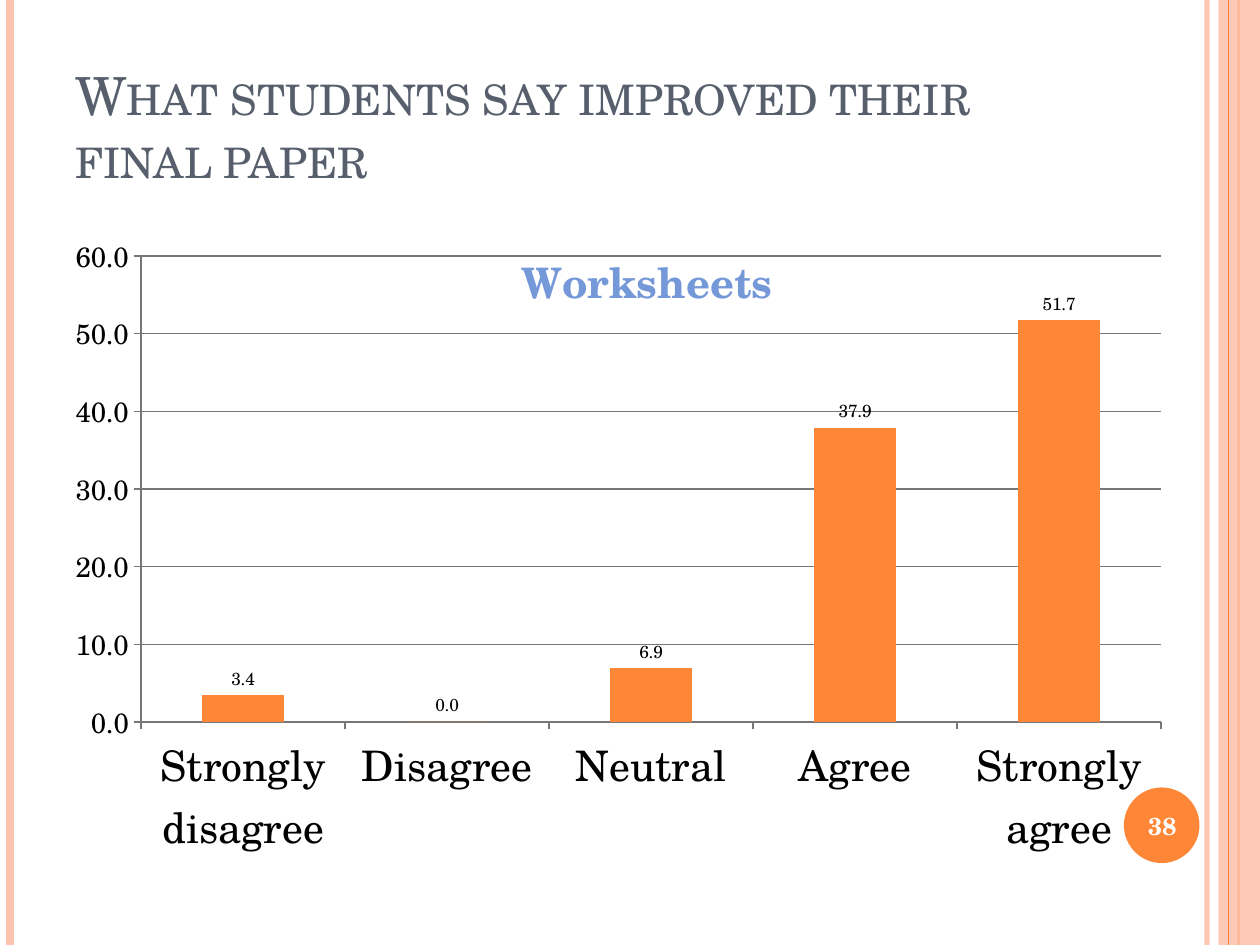
from lxml import etree
from pptx import Presentation
from pptx.chart.data import CategoryChartData
from pptx.dml.color import RGBColor
from pptx.enum.chart import XL_CHART_TYPE, XL_LABEL_POSITION, XL_TICK_MARK
from pptx.enum.shapes import MSO_CONNECTOR, MSO_SHAPE
from pptx.enum.text import MSO_ANCHOR, PP_ALIGN
from pptx.oxml import parse_xml
from pptx.oxml.ns import nsdecls, qn
from pptx.util import Inches, Pt

FONT = "TeX Gyre Schola"
ORANGE = RGBColor(0xFE, 0x86, 0x37)
PEACH = RGBColor(0xFE, 0xC3, 0xAE)
SLATE = RGBColor(0x57, 0x5F, 0x6D)
BLUE = RGBColor(0x75, 0x98, 0xD9)
GREY = RGBColor(0x77, 0x77, 0x77)
BLACK = RGBColor(0, 0, 0)
WHITE = RGBColor(0xFF, 0xFF, 0xFF)


def set_alpha(part, percent):
    """Make the solid colour inside a shape's properties see-through."""
    color = next(part.iter(qn("a:srgbClr")))
    etree.SubElement(color, qn("a:alpha")).set("val", str(percent * 1000))


def set_font(font, size, color, bold=False):
    """Give a font the slide's typeface and the wanted format."""
    font.name = FONT
    font.size = Pt(size)
    font.bold = bold
    font.color.rgb = color


def add_text(s, text, box, size, color, bold=False, small_caps=False,
             align=PP_ALIGN.LEFT, anchor=MSO_ANCHOR.MIDDLE):
    """Add a wrapped text box with one formatted run."""
    tf = s.shapes.add_textbox(*map(Inches, box)).text_frame
    tf.word_wrap = True
    tf.vertical_anchor = anchor
    p = tf.paragraphs[0]
    p.alignment = align
    r = p.add_run()
    r.text = text
    set_font(r.font, size, color, bold)
    if small_caps:
        r.font._element.set("cap", "small")


def add_shape(s, kind, box, color):
    """Add a plain filled shape without outline or shadow."""
    shape = s.shapes.add_shape(kind, *map(Inches, box))
    shape.shadow.inherit = False
    shape.fill.solid()
    shape.fill.fore_color.rgb = color
    shape.line.fill.background()
    return shape


def add_stripe(s, x, height, color, width):
    """Add a vertical line from the top of the slide."""
    line = s.shapes.add_connector(
        MSO_CONNECTOR.STRAIGHT, Inches(x), Inches(0), Inches(x), Inches(height))
    line.line.color.rgb = color
    line.line.width = Pt(width)
    etree.SubElement(line._element.spPr, qn("a:effectLst"))
    return line


def add_borders(s, width, height):
    """Draw the striped left and right edges."""
    set_alpha(add_stripe(s, width - 0.42, height, PEACH, 3)._element, 93)
    add_stripe(s, 0.08, height, PEACH, 4.5)
    add_stripe(s, width - 0.17, height, ORANGE, 1.5)
    band = add_shape(s, MSO_SHAPE.RECTANGLE, (width - 0.33, 0, 0.33, height), PEACH)
    set_alpha(band._element, 87)
    add_stripe(s, width - 0.25, height, ORANGE, 0.75)


def add_badge(s, x, y, size, number):
    """Draw the page number in its disc."""
    add_shape(s, MSO_SHAPE.OVAL, (x, y, size, size), ORANGE)
    add_text(s, number, (x - 0.03, y + 0.02, size + 0.07, size - 0.03), 14, WHITE,
             bold=True, align=PP_ALIGN.CENTER)


def set_layout(element, **places):
    """Place a chart part by fractions of the chart area."""
    for old in element.findall(qn("c:layout")):
        element.remove(old)
    target = '<c:layoutTarget val="inner"/>' if "w" in places else ""
    modes = "".join(f'<c:{k}Mode val="edge"/>' for k in "xy")
    values = "".join(f'<c:{k} val="{v}"/>' for k, v in places.items())
    layout = parse_xml(f'<c:layout {nsdecls("c")}><c:manualLayout>{target}{modes}'
                       f'{values}</c:manualLayout></c:layout>')
    tx = element.find(qn("c:tx"))
    if tx is None:
        element.insert(0, layout)
    else:
        tx.addnext(layout)


def style_axis(axis, size):
    """Format an axis line, its ticks and its labels."""
    axis.major_tick_mark = XL_TICK_MARK.OUTSIDE
    axis.minor_tick_mark = XL_TICK_MARK.NONE
    axis.format.line.color.rgb = GREY
    axis.format.line.width = Pt(0.75)
    set_font(axis.tick_labels.font, size, BLACK)


def add_title(chart, text):
    """Lay the chart title over the plot."""
    title = chart.chart_title
    p = title.text_frame.paragraphs[0]
    r = p.add_run()
    r.text = text
    set_font(r.font, 24, BLUE, bold=True)
    set_layout(title._element, x=0.39, y=0.06)
    for old in title._element.findall(qn("c:overlay")):
        title._element.remove(old)
    overlay = parse_xml(f'<c:overlay {nsdecls("c")} val="1"/>')
    title._element.find(qn("c:layout")).addnext(overlay)


def add_survey_chart(s, box, name, answers):
    """Add the column chart of survey answers."""
    data = CategoryChartData(number_format="0.0")
    data.categories = list(answers)
    data.add_series(name, list(answers.values()))
    chart = s.shapes.add_chart(
        XL_CHART_TYPE.COLUMN_CLUSTERED, *map(Inches, box), data).chart
    chart.has_legend = False
    set_font(chart.font, 10, BLACK)
    add_title(chart, name)
    plot_area = next(chart._chartSpace.iter(qn("c:plotArea")))
    set_layout(plot_area, x=0.05, y=0.09, w=0.93, h=0.69)

    style_axis(chart.category_axis, 24)
    axis = chart.value_axis
    style_axis(axis, 16)
    axis.minimum_scale, axis.maximum_scale, axis.major_unit = 0, 60, 10
    axis.tick_labels.number_format = "0.0"
    axis.tick_labels.number_format_is_linked = False
    axis.major_gridlines.format.line.color.rgb = GREY
    axis.major_gridlines.format.line.width = Pt(0.75)

    plot = chart.plots[0]
    plot.gap_width = 150
    plot.vary_by_categories = False
    plot.series[0].format.fill.solid()
    plot.series[0].format.fill.fore_color.rgb = ORANGE
    plot.has_data_labels = True
    labels = plot.data_labels
    labels.show_value = True
    labels.number_format = "0.0"
    labels.number_format_is_linked = False
    labels.position = XL_LABEL_POSITION.OUTSIDE_END
    set_font(labels.font, 10, BLACK)


def main():
    """Build and save the slide."""
    prs = Presentation()
    prs.slide_width, prs.slide_height = Inches(10), Inches(7.5)
    s = prs.slides.add_slide(prs.slide_layouts[6])
    add_borders(s, 10, 7.5)
    add_text(s, "What students say improved their final paper", (0.5, 0.3, 8.17, 1.25),
             30, SLATE, small_caps=True, anchor=MSO_ANCHOR.BOTTOM)
    add_survey_chart(s, (0.6, 1.55, 8.79, 5.36), "Worksheets", {
        "Strongly disagree": 3.4, "Disagree": 0, "Neutral": 6.9,
        "Agree": 37.9, "Strongly agree": 51.7})
    add_badge(s, 8.92, 6.25, 0.6, "38")
    prs.save("out.pptx")


if __name__ == "__main__":
    main()
